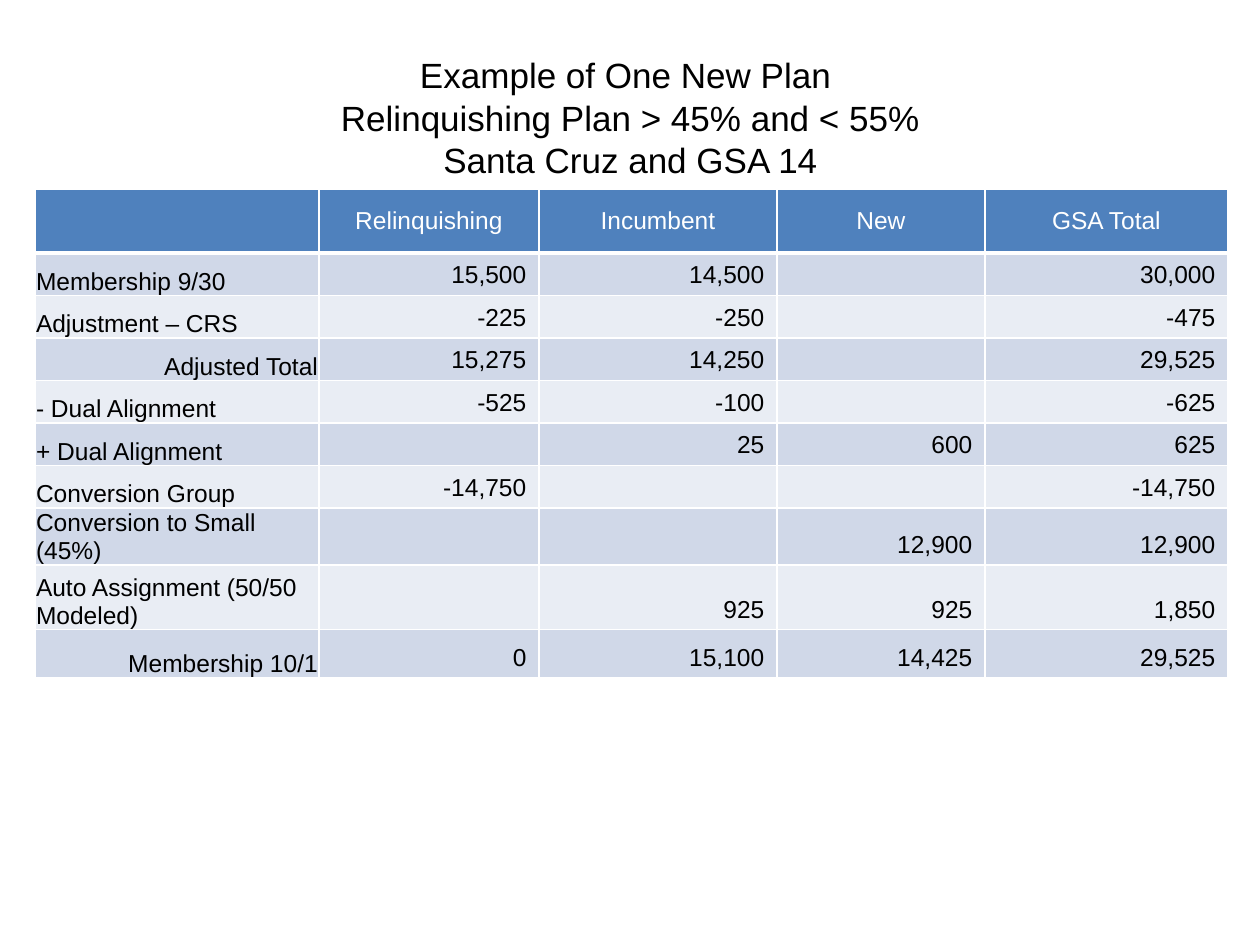
from dataclasses import dataclass

from lxml import etree
from pptx import Presentation
from pptx.dml.color import RGBColor
from pptx.enum.text import MSO_ANCHOR, MSO_AUTO_SIZE, PP_ALIGN
from pptx.oxml.ns import qn
from pptx.util import Pt

LEFT, CENTER, RIGHT = PP_ALIGN.LEFT, PP_ALIGN.CENTER, PP_ALIGN.RIGHT
MIDDLE, BOTTOM = MSO_ANCHOR.MIDDLE, MSO_ANCHOR.BOTTOM
NO_AUTOFIT = MSO_AUTO_SIZE.NONE
TITLE_ONLY = 5


@dataclass(frozen=True)
class Theme:
    font: str = "Arial"
    text: str = "000000"
    header_text: str = "FFFFFF"
    header_fill: str = "4F81BD"
    bands: tuple = ("D0D8E8", "E9EDF4")
    border: str = "FFFFFF"
    title_size: int = 20
    table_size: int = 14
    thin: int = 1
    thick: int = 3


TITLE_LINES = [
    "Example of One New Plan ",
    "Relinquishing Plan > 45% and < 55%",
    "Santa Cruz and GSA 14",
]
HEADERS = ["", "Relinquishing", "Incumbent", "New", "GSA Total"]
MEMBERSHIP = [
    ["Membership 9/30", "15,500", "14,500", "", "30,000"],
    ["Adjustment – CRS", "-225", "-250", "", "-475"],
    ["Adjusted Total", "15,275", "14,250", "", "29,525"],
    ["- Dual Alignment", "-525", "-100", "", "-625"],
    ["+ Dual Alignment", "", "25", "600", "625"],
    ["Conversion Group", "-14,750", "", "", "-14,750"],
    ["Conversion to Small (45%)", "", "", "12,900", "12,900"],
    ["Auto Assignment (50/50 Modeled)", "", "925", "925", "1,850"],
    ["Membership 10/1", "0", "15,100", "14,425", "29,525"],
]
TOTAL_LABELS = {"Adjusted Total", "Membership 10/1"}
COLUMN_WIDTHS = [284, 220, 238, 208, 243]
ROW_HEIGHTS = [64, 40, 41, 40, 41, 42, 40, 57, 65, 48]


def px(length):
    return round(length * 914400 / 126)


class SlideBuilder:
    def __init__(self, page, theme):
        self.page = page
        self.theme = theme

    def style(self, paragraph, size, color, align):
        paragraph.alignment = align
        for span in paragraph.runs:
            span.font.name = self.theme.font
            span.font.size = Pt(size)
            span.font.bold = False
            span.font.color.rgb = RGBColor.from_string(color)
        if not paragraph.runs:
            # An empty cell needs its size too, or its row grows taller.
            etree.SubElement(paragraph._p, qn("a:endParaRPr"), sz=str(size * 100))

    def title(self, lines, left, top, width, height):
        box = self.page.shapes.title
        box.left, box.top = px(left), px(top)
        box.width, box.height = px(width), px(height)
        frame = box.text_frame
        frame.auto_size = NO_AUTOFIT
        frame.vertical_anchor = MIDDLE
        paragraph = frame.paragraphs[0]
        paragraph.text = "\v".join(lines)
        self.style(paragraph, self.theme.title_size, self.theme.text, CENTER)

    def borders(self, cell, top, bottom):
        """Draw the four cell borders; must run before the cell is filled."""
        thin = self.theme.thin
        properties = cell._tc.get_or_add_tcPr()
        for side, points in zip("LRTB", (thin, thin, top, bottom)):
            line = etree.SubElement(properties, qn(f"a:ln{side}"), w=str(Pt(points)))
            fill = etree.SubElement(line, qn("a:solidFill"))
            etree.SubElement(fill, qn("a:srgbClr"), val=self.theme.border)

    def cell(self, cell, text, fill, color, align, anchor, top, bottom):
        self.borders(cell, top, bottom)
        cell.fill.solid()
        cell.fill.fore_color.rgb = RGBColor.from_string(fill)
        cell.vertical_anchor = anchor
        paragraph = cell.text_frame.paragraphs[0]
        paragraph.text = text
        self.style(paragraph, self.theme.table_size, color, align)

    def table(self, headers, records, left, top, widths, heights):
        theme = self.theme
        table = self.page.shapes.add_table(
            len(heights), len(widths), px(left), px(top),
            px(sum(widths)), px(sum(heights))).table
        table.first_row = table.horz_banding = False
        for column, width in zip(table.columns, widths):
            column.width = px(width)
        for row, height in zip(table.rows, heights):
            row.height = px(height)

        for column, text in enumerate(headers):
            self.cell(table.cell(0, column), text, theme.header_fill,
                      theme.header_text, CENTER, MIDDLE, theme.thin, theme.thick)
        for number, record in enumerate(records):
            fill = theme.bands[number % 2]
            above = theme.thin if number else theme.thick
            for column, text in enumerate(record):
                cell = table.cell(number + 1, column)
                is_label = column == 0
                align = LEFT if is_label and text not in TOTAL_LABELS else RIGHT
                self.cell(cell, text, fill, theme.text, align, BOTTOM,
                          above, theme.thin)
                if is_label:
                    cell.margin_left = cell.margin_right = cell.margin_top = px(1)
                    cell.margin_bottom = 0


def main():
    deck = Presentation()
    deck.slide_width, deck.slide_height = px(1260), px(945)
    page = deck.slides.add_slide(deck.slide_layouts[TITLE_ONLY])
    builder = SlideBuilder(page, Theme())
    builder.title(TITLE_LINES, 32, 38, 1197, 158)
    builder.table(HEADERS, MEMBERSHIP, 35, 189, COLUMN_WIDTHS, ROW_HEIGHTS)
    deck.save("out.pptx")


if __name__ == "__main__":
    main()
